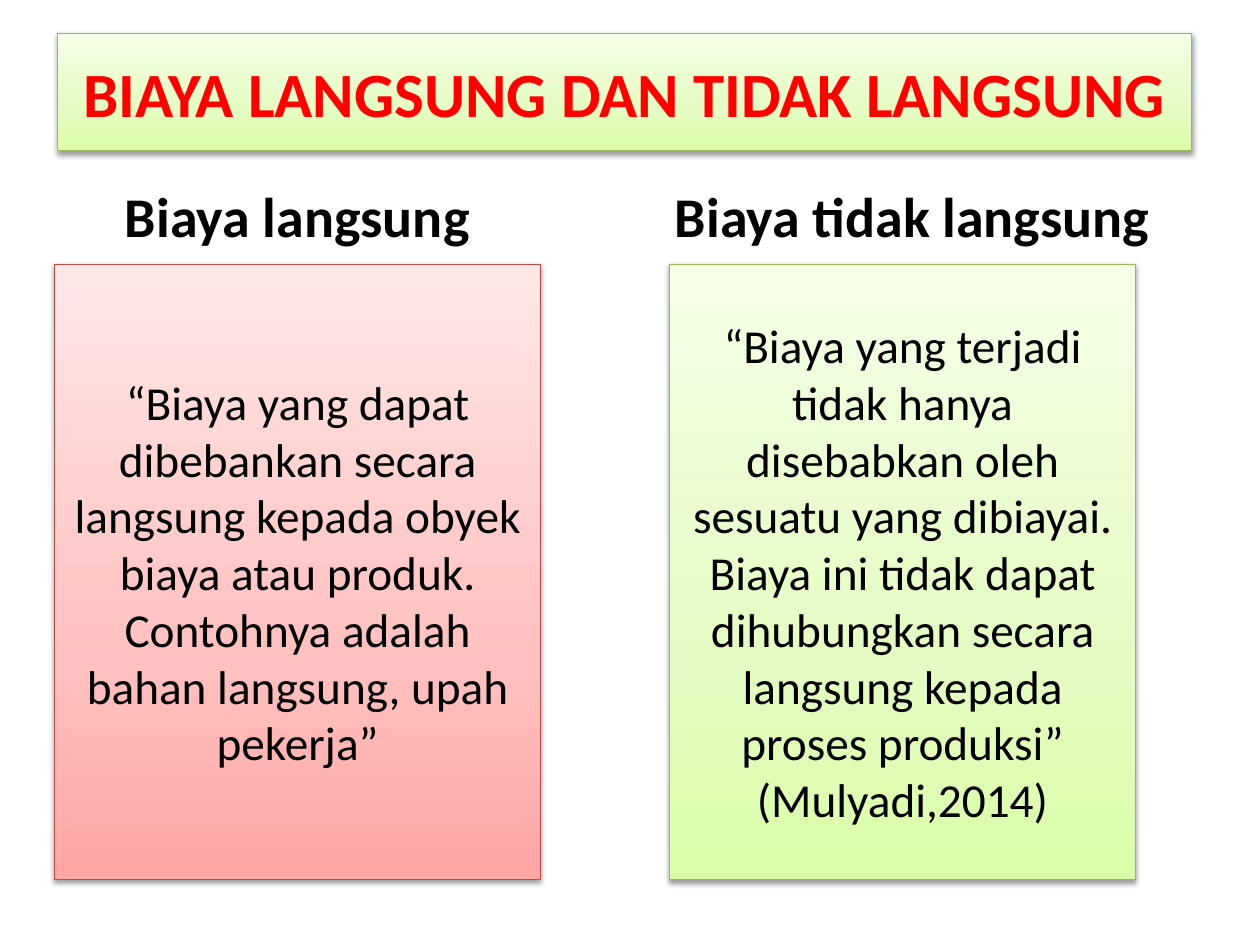
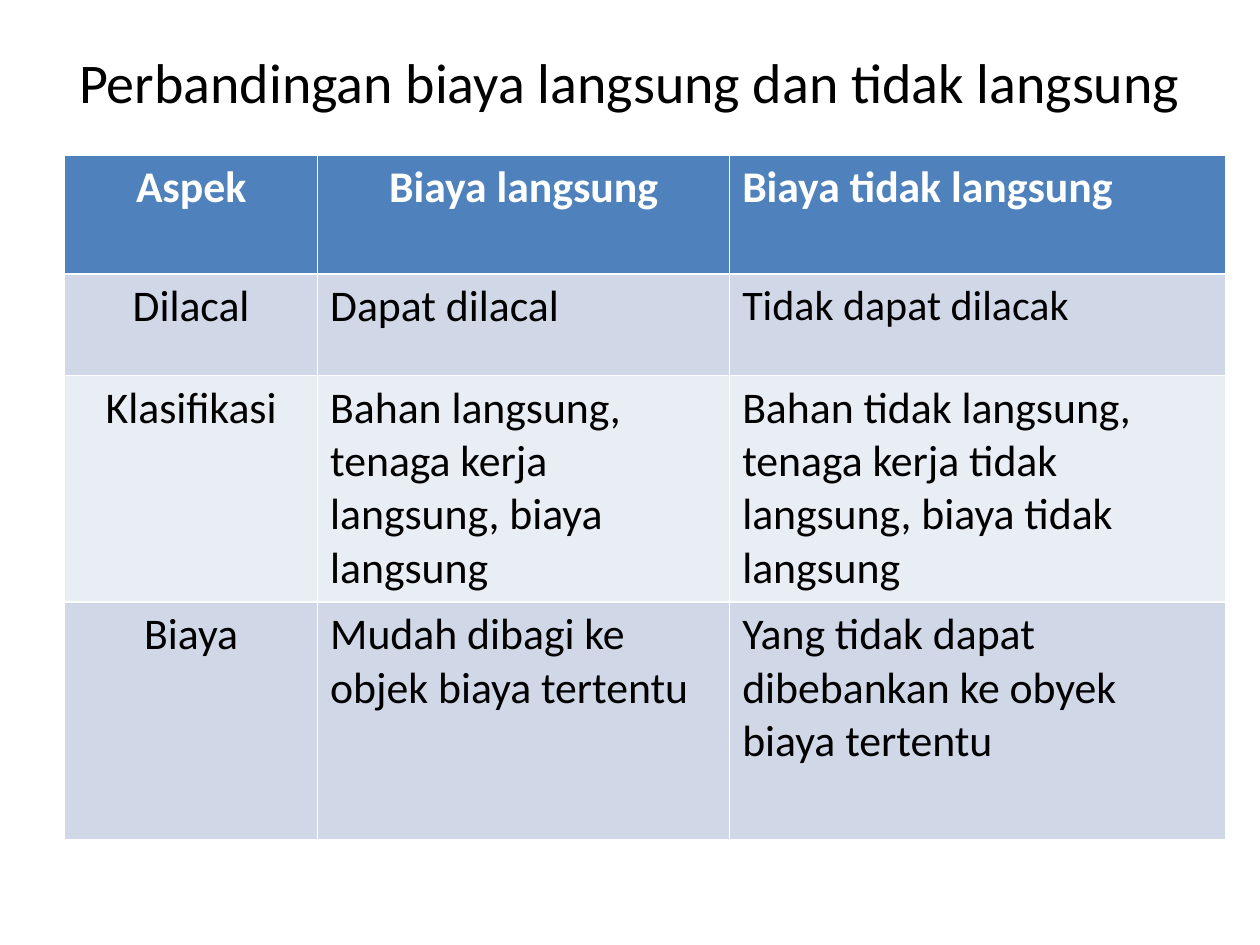
import copy

import pptx
import pptx.dml.color
import pptx.enum.shapes
import pptx.enum.text
import pptx.oxml.ns
import pptx.util
from lxml import etree

Pt = pptx.util.Pt
qn = pptx.oxml.ns.qn
ALIGN = pptx.enum.text.PP_ALIGN
ANCHOR = pptx.enum.text.MSO_ANCHOR

FONT = "Calibri"
BLACK, WHITE, RED = "000000", "FFFFFF", "FF0000"
HEADER_FILL = "4F81BD"
ROW_FILLS = ("D0D8E8", "E9EDF4")
# Each theme: line colour, then gradient colours from bottom to top.
GREEN = ("98B955", ("DAFDA7", "E4FCC2", "F5FFE7"))
PINK = ("BF4C48", ("FFA6A5", "FFC0BF", "FFE7E7"))
GRADIENT_POSITIONS = (0, 0.35, 1)


def rgb(value):
    return pptx.dml.color.RGBColor.from_string(value)


class Deck:
    """Holds the presentation, its shared style and the current slide."""

    def __init__(self):
        self.presentation = pptx.Presentation()
        self.presentation.slide_width = Pt(720)
        self.presentation.slide_height = Pt(540)
        self.slide = None

    def new_slide(self):
        self.slide = self.presentation.slides.add_slide(self.presentation.slide_layouts[6])

    def set_text(self, frame, words, size, color=BLACK, bold=False, align=ALIGN.CENTER):
        frame.text = words
        frame.word_wrap = True
        paragraph = frame.paragraphs[0]
        paragraph.alignment = align
        font = paragraph.runs[0].font
        font.name, font.size, font.bold = FONT, Pt(size), bold
        font.color.rgb = rgb(color)

    def label(self, box, words, size, bold=False):
        frame = self.slide.shapes.add_textbox(*map(Pt, box)).text_frame
        self.set_text(frame, words, size, bold=bold)
        frame.vertical_anchor = ANCHOR.MIDDLE

    def panel(self, box, theme, words, size, color=BLACK, bold=False):
        line_color, gradient = theme
        rectangle = pptx.enum.shapes.MSO_SHAPE.RECTANGLE
        panel = self.slide.shapes.add_shape(rectangle, *map(Pt, box))
        panel.line.color.rgb = rgb(line_color)
        panel.line.width = Pt(0.75)
        self.paint_gradient(panel, gradient)
        self.cast_shadow(panel)
        self.set_text(panel.text_frame, words, size, color, bold)
        panel.text_frame.vertical_anchor = ANCHOR.MIDDLE

    def paint_gradient(self, shape, colors):
        shape.fill.gradient()
        shape.fill.gradient_angle = 90
        stop_list = next(shape.element.iter(qn("a:gsLst")))
        stop_list.append(copy.deepcopy(stop_list[-1]))
        for stop, color, position in zip(shape.fill.gradient_stops, colors, GRADIENT_POSITIONS):
            stop.color.rgb = rgb(color)
            stop.position = position

    def cast_shadow(self, shape):
        shape.shadow.inherit = False
        effects = next(shape.element.iter(qn("a:effectLst")))
        shadow = etree.SubElement(effects, qn("a:outerShdw"), blurRad=str(Pt(3.1)),
                                  dist=str(Pt(1.6)), dir="5400000", rotWithShape="0")
        color = etree.SubElement(shadow, qn("a:srgbClr"), val=BLACK)
        etree.SubElement(color, qn("a:alpha"), val="38000")

    def table(self, left, top, widths, heights, rows):
        """Rows hold (words, size, alignment); the default style draws the white rules."""
        table = self.slide.shapes.add_table(
            len(rows), len(widths), Pt(left), Pt(top), Pt(sum(widths)), Pt(sum(heights))).table
        for column, width in zip(table.columns, widths):
            column.width = Pt(width)
        for index, (row, height) in enumerate(zip(rows, heights)):
            table.rows[index].height = Pt(height)
            header = index == 0
            fill = HEADER_FILL if header else ROW_FILLS[(index - 1) % 2]
            for column, (words, size, align) in enumerate(row):
                cell = table.cell(index, column)
                cell.fill.solid()
                cell.fill.fore_color.rgb = rgb(fill)
                self.set_text(cell.text_frame, words, size, WHITE if header else BLACK,
                              header, align)


def cost_definitions(deck):
    deck.new_slide()
    deck.panel((33, 19, 648, 67), GREEN, "BIAYA LANGSUNG DAN TIDAK LANGSUNG", 36, RED, True)
    deck.label((360, 94.5, 323, 57), "Biaya tidak langsung", 32, True)
    deck.label((31, 94.5, 278, 57), "Biaya langsung", 32, True)
    deck.panel((31, 151, 278, 351.5), PINK,
               "“Biaya yang dapat dibebankan secara langsung kepada obyek biaya atau produk. "
               "Contohnya adalah bahan langsung, upah pekerja”", 27)
    deck.panel((382.5, 151, 266.5, 351.5), GREEN,
               "“Biaya yang terjadi tidak hanya disebabkan oleh sesuatu yang dibiayai. "
               "Biaya ini tidak dapat dihubungkan secara langsung kepada proses produksi” "
               "(Mulyadi,2014)", 27)


def cost_comparison(deck):
    deck.new_slide()
    deck.label((36, 21.5, 648, 50), "Perbandingan biaya langsung dan tidak langsung", 32)

    def row(aspect, direct, indirect, direct_align=ALIGN.LEFT, indirect_size=25):
        return ((aspect, 25, ALIGN.CENTER), (direct, 25, direct_align),
                (indirect, indirect_size, ALIGN.LEFT))

    deck.table(37, 88.5, (144.5, 235.5, 283.5), (68, 58, 129.5, 136), (
        row("Aspek", "Biaya langsung", "Biaya tidak langsung", direct_align=ALIGN.CENTER),
        row("Dilacal", "Dapat dilacal", "Tidak dapat dilacak", indirect_size=24),
        row("Klasifikasi", "Bahan langsung, tenaga kerja langsung, biaya langsung",
            "Bahan tidak langsung, tenaga kerja tidak langsung, biaya tidak langsung"),
        row("Biaya", "Mudah dibagi ke objek biaya tertentu",
            "Yang tidak dapat dibebankan ke obyek biaya tertentu"),
    ))


def main():
    deck = Deck()
    cost_definitions(deck)
    cost_comparison(deck)
    deck.presentation.save("out.pptx")


if __name__ == "__main__":
    main()
